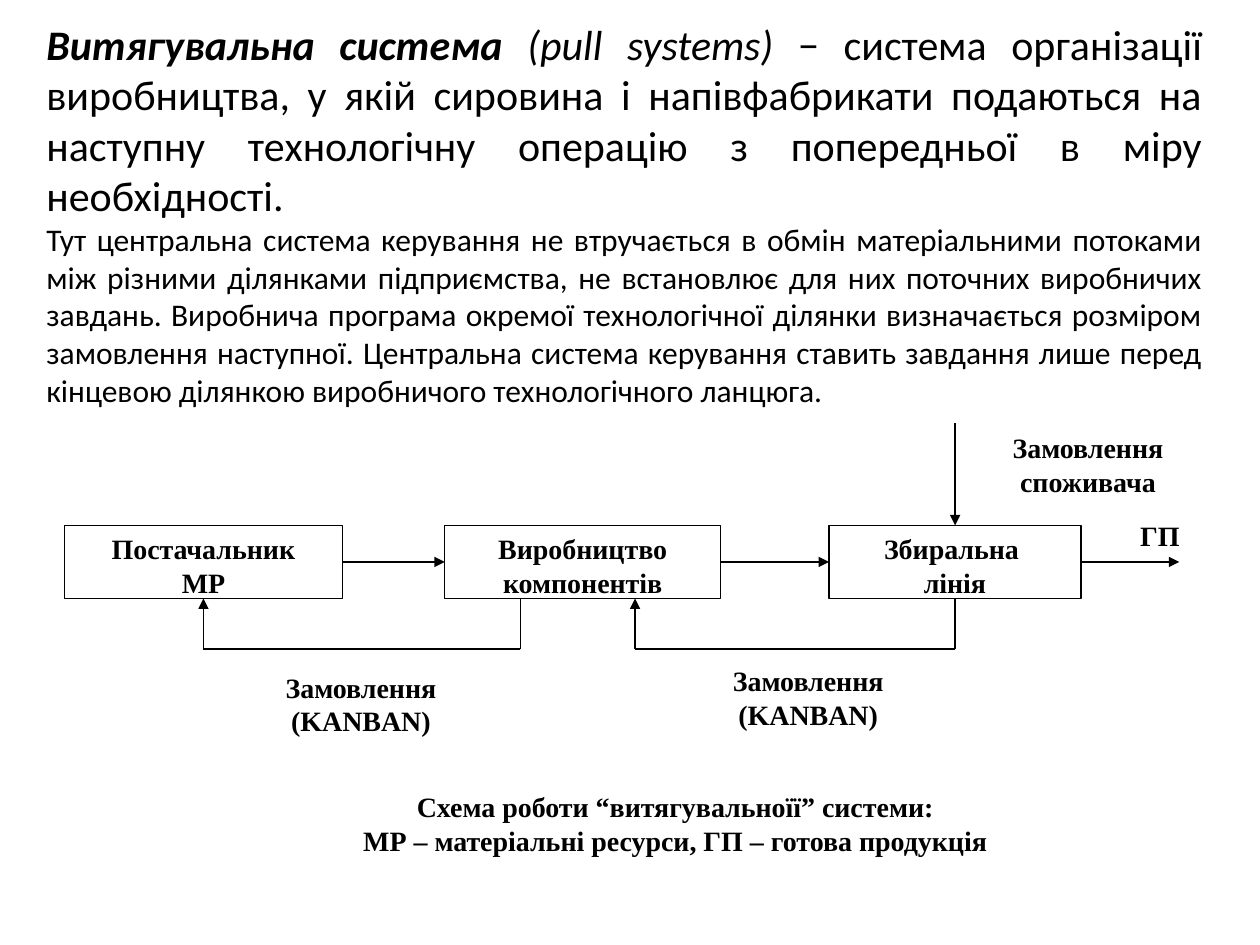
"""Build a slide that explains the pull production system with a flow diagram."""
from typing import NamedTuple, Optional

from lxml.etree import SubElement
from pptx import Presentation
from pptx.dml.color import RGBColor
from pptx.enum.shapes import MSO_CONNECTOR as Connector, MSO_SHAPE as Shape
from pptx.enum.text import MSO_ANCHOR as Anchor, PP_ALIGN as Align
from pptx.oxml.ns import qn
from pptx.util import Inches, Pt

BLACK = RGBColor(0x00, 0x00, 0x00)
WHITE = RGBColor(0xFF, 0xFF, 0xFF)
BODY_FONT = "Calibri"
DIAGRAM_FONT = "Times New Roman"
TOP, LEFT, BOTTOM, RIGHT = range(4)
STAGE_TOP, STAGE_HEIGHT = 4.17, 0.58
STAGE_MIDDLE = STAGE_TOP + STAGE_HEIGHT / 2
STAGE_BOTTOM = STAGE_TOP + STAGE_HEIGHT
RETURN_LEVEL = 5.15


class Block(NamedTuple):
    lines: tuple
    left: float
    top: float
    width: float
    height: float
    outlined: bool = False
    align: Align = Align.CENTER


class Joint(NamedTuple):
    x: float
    y: float
    box: Optional[object] = None
    side: int = TOP


def stage(left: float, width: float, *lines: str) -> Block:
    return Block(lines, left, STAGE_TOP, width, STAGE_HEIGHT, outlined=True)


STAGES = (
    stage(0.51, 2.21, "Постачальник", "МР"),
    stage(3.53, 2.19, "Виробництво компонентів"),
    stage(6.58, 2.0, "Збиральна ", "лінія"),
)
KANBAN = ("Замовлення", "(KANBAN)")
LABELS = (
    Block(("Замовлення споживача",), 7.8, 3.37, 1.67, 0.57),
    Block(("ГП",), 8.95, 4.07, 0.7, 0.3, align=Align.LEFT),
    Block(KANBAN, 1.91, 5.27, 1.91, 0.51),
    Block(KANBAN, 5.46, 5.22, 1.91, 0.51),
    Block(("Схема роботи “витягувальноїї” системи:",
           "МР – матеріальні ресурси, ГП – готова продукція"), 1.66, 6.22, 7.4, 0.6),
)
DEFINITION = (
    ("Витягувальна система ", {"bold": True, "italic": True}),
    ("(pull systems)", {"italic": True}),
    (" − система організації виробництва, у якій сировина і напівфабрикати "
     "подаються на наступну технологічну операцію з попередньої в міру необхідності. ", {}),
)
EXPLANATION = (
    "Тут центральна система керування не втручається в обмін матеріальними потоками "
    "між різними ділянками підприємства, не встановлює для них поточних виробничих "
    "завдань. Виробнича програма окремої технологічної ділянки визначається розміром "
    "замовлення наступної. Центральна система керування ставить завдання лише перед "
    "кінцевою ділянкою виробничого технологічного ланцюга. "
)


def add_span(para, text: str, *, font: str, size: float,
             bold: bool = False, italic: bool = False) -> None:
    span = para.add_run()
    span.text = text
    span.font.name = font
    span.font.size = Pt(size)
    span.font.bold = bold
    span.font.italic = italic
    span.font.color.rgb = BLACK


def add_paragraph(frame, index: int, align: Align):
    para = frame.add_paragraph() if index else frame.paragraphs[0]
    para.alignment = align
    return para


def add_body(page) -> None:
    box = page.shapes.add_textbox(Inches(0.27), Inches(0.08), Inches(9.37), Inches(3.23))
    frame = box.text_frame
    frame.word_wrap = True
    frame.vertical_anchor = Anchor.MIDDLE
    para = add_paragraph(frame, 0, Align.JUSTIFY)
    for text, style in DEFINITION:
        add_span(para, text, font=BODY_FONT, size=24, **style)
    para = add_paragraph(frame, 1, Align.JUSTIFY)
    add_span(para, EXPLANATION, font=BODY_FONT, size=18)


def add_block(page, block: Block):
    box = page.shapes.add_shape(Shape.RECTANGLE, Inches(block.left), Inches(block.top),
                                Inches(block.width), Inches(block.height))
    box.shadow.inherit = False
    box.fill.solid()
    box.fill.fore_color.rgb = WHITE
    if block.outlined:
        box.line.color.rgb = BLACK
        box.line.width = Pt(0.75)
    else:
        box.line.fill.background()
    frame = box.text_frame
    frame.word_wrap = True
    frame.vertical_anchor = Anchor.TOP
    for index, text in enumerate(block.lines):
        para = add_paragraph(frame, index, block.align)
        add_span(para, text, font=DIAGRAM_FONT, size=16, bold=True)
    return box


def add_line(page, start: Joint, end: Joint, arrow: bool = False) -> None:
    line = page.shapes.add_connector(Connector.STRAIGHT, Inches(start.x), Inches(start.y),
                                     Inches(end.x), Inches(end.y))
    line.line.color.rgb = BLACK
    line.line.width = Pt(0.75)
    if arrow:
        SubElement(line.line._get_or_add_ln(), qn("a:tailEnd"), type="triangle")
    SubElement(line._element.spPr, qn("a:effectLst"))
    if start.box is not None:
        line.begin_connect(start.box, start.side)
    if end.box is not None:
        line.end_connect(end.box, end.side)


def side_joint(block: Block, box, side: int) -> Joint:
    x = block.left + block.width * {LEFT: 0, RIGHT: 1}.get(side, 0.5)
    y = {TOP: STAGE_TOP, BOTTOM: STAGE_BOTTOM}.get(side, STAGE_MIDDLE)
    return Joint(x, y, box, side)


def add_return(page, source: Joint, target: Joint) -> None:
    source_corner = Joint(source.x, RETURN_LEVEL)
    target_corner = Joint(target.x, RETURN_LEVEL)
    add_line(page, source, source_corner)
    add_line(page, source_corner, target_corner)
    add_line(page, target_corner, target, arrow=True)


def main() -> None:
    deck = Presentation()
    deck.slide_width, deck.slide_height = Inches(10), Inches(7.5)
    page = deck.slides.add_slide(deck.slide_layouts[6])
    add_body(page)
    for label in LABELS:
        add_block(page, label)
    stages = [(block, add_block(page, block)) for block in STAGES]
    supplier, _, assembly = stages

    for before, after in zip(stages, stages[1:]):
        add_line(page, side_joint(*before, RIGHT), side_joint(*after, LEFT), arrow=True)
    add_line(page, side_joint(*assembly, RIGHT), Joint(9.36, STAGE_MIDDLE), arrow=True)
    order = side_joint(*assembly, TOP)
    add_line(page, Joint(order.x, 3.36), order, arrow=True)

    add_return(page, Joint(4.13, STAGE_BOTTOM), side_joint(*supplier, BOTTOM))
    add_return(page, side_joint(*assembly, BOTTOM), Joint(5.04, STAGE_BOTTOM))
    deck.save("out.pptx")


if __name__ == "__main__":
    main()
